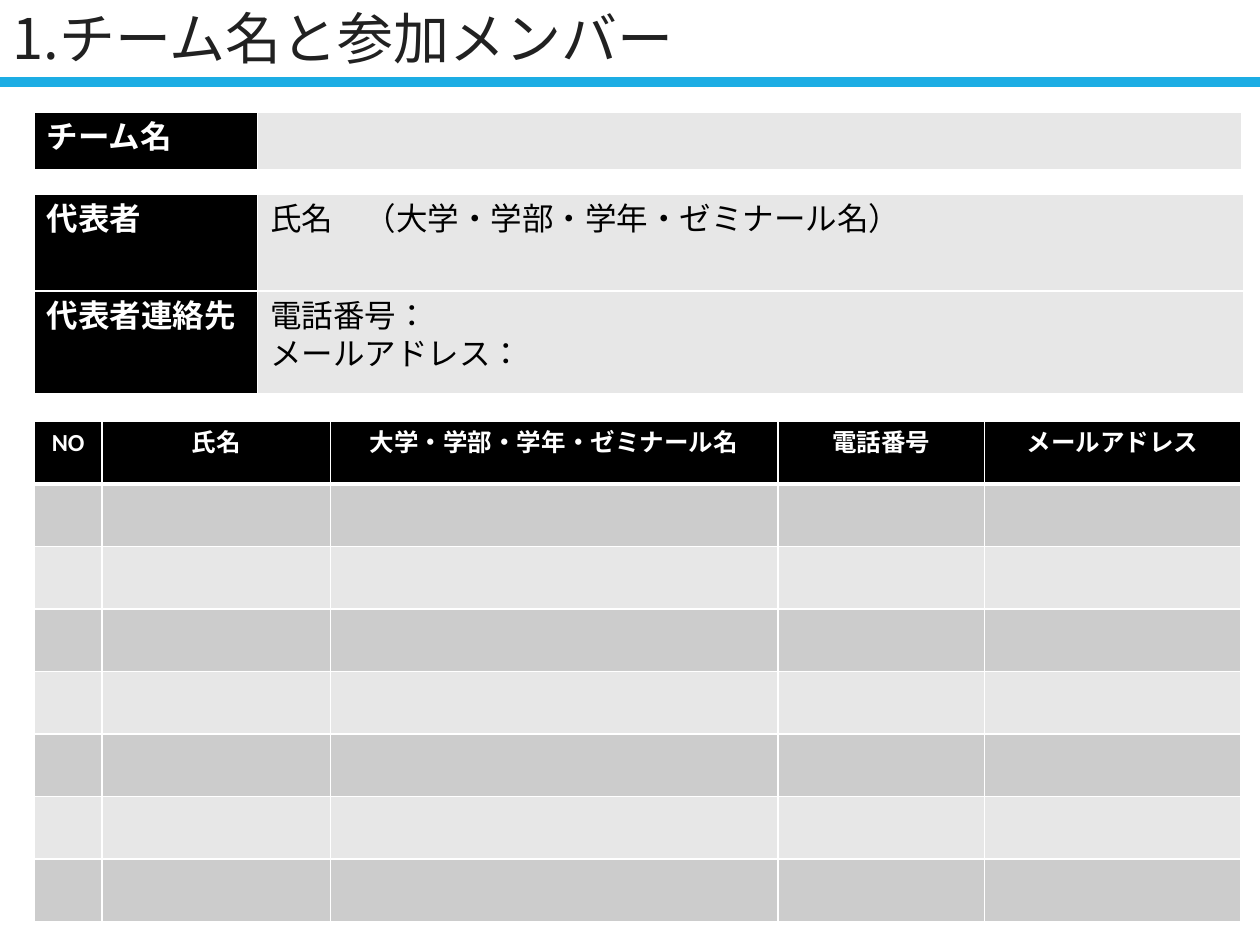
from dataclasses import dataclass

from lxml.etree import SubElement
from pptx import Presentation
from pptx.dml.color import RGBColor
from pptx.enum.shapes import MSO_CONNECTOR
from pptx.enum.text import MSO_ANCHOR, MSO_AUTO_SIZE, PP_ALIGN
from pptx.oxml.ns import qn
from pptx.util import Cm, Pt

BLACK = RGBColor(0x00, 0x00, 0x00)
WHITE = RGBColor(0xFF, 0xFF, 0xFF)
INK = RGBColor(0x21, 0x21, 0x21)
BLUE = RGBColor(0x1C, 0xAD, 0xE4)
PALE = RGBColor(0xE7, 0xE7, 0xE7)
GREY = RGBColor(0xCC, 0xCC, 0xCC)
FONT = "Calibri"
LEFT = 0.69


@dataclass
class Grid:
    top: float
    cols: list[float]
    rows: list[float]
    text: list[list[str]]
    size: int
    head: bool = False


def set_font(para, face: str, size: int, color: RGBColor, bold: bool) -> None:
    for run in para.runs:
        font = run.font
        font.name, font.size, font.bold = face, Pt(size), bold
        font.color.rgb = color
        props = font._element
        props.set("lang", "ja-JP")
        SubElement(props, qn("a:ea")).set("typeface", face)


def set_edge(cell, side: str, width: float) -> None:
    edge = SubElement(cell._tc.get_or_add_tcPr(), qn(f"a:{side}"), w=str(Pt(width)))
    fill = SubElement(edge, qn("a:solidFill"))
    SubElement(fill, qn("a:srgbClr"), val=str(WHITE))


def draw_cell(cell, text: str, grid: Grid, row: int, col: int) -> None:
    label = row == 0 if grid.head else col == 0
    for side in ("lnL", "lnR", "lnT", "lnB"):
        thick = grid.head and (row, side) in ((0, "lnB"), (1, "lnT"))
        set_edge(cell, side, 3 if thick else 1)
    cell.fill.solid()
    band = GREY if grid.head and row % 2 else PALE
    cell.fill.fore_color.rgb = BLACK if label else band
    cell.text_frame.text = text
    for para in cell.text_frame.paragraphs:
        para.alignment = PP_ALIGN.CENTER if grid.head else PP_ALIGN.LEFT
        set_font(para, FONT, grid.size, WHITE if label else BLACK, label)


def draw_grid(slide, grid: Grid) -> None:
    frame = slide.shapes.add_table(
        len(grid.rows), len(grid.cols), Cm(LEFT), Cm(grid.top),
        Cm(sum(grid.cols)), Cm(sum(grid.rows)),
    )
    table = frame.table
    table.first_row = grid.head
    table.horz_banding = grid.head
    for col, width in zip(table.columns, grid.cols):
        col.width = Cm(width)
    for row, height in zip(table.rows, grid.rows):
        row.height = Cm(height)
    for i, line in enumerate(grid.text):
        for j, text in enumerate(line):
            draw_cell(table.cell(i, j), text, grid, i, j)


def draw_title(slide, text: str) -> None:
    title = slide.shapes.title
    title.left, title.top, title.width, title.height = Cm(0), Cm(0), Cm(21.9), Cm(1.65)
    frame = title.text_frame
    frame.text = text
    frame.auto_size = MSO_AUTO_SIZE.NONE
    frame.vertical_anchor = MSO_ANCHOR.MIDDLE
    para = frame.paragraphs[0]
    para.alignment = PP_ALIGN.LEFT
    para.line_spacing = 0.9
    set_font(para, "Noto Sans CJK JP", 32, INK, False)


def draw_rule(slide, top: float) -> None:
    rule = slide.shapes.add_connector(
        MSO_CONNECTOR.STRAIGHT, Cm(0), Cm(top), Cm(25.4), Cm(top)
    )
    rule.line.color.rgb = BLUE
    rule.line.width = Pt(6)
    SubElement(rule._element.spPr, qn("a:effectLst"))


TEAM = Grid(2.27, [4.5, 19.84], [1.15], [["チーム名", ""]], 18)
LEAD = Grid(
    3.92, [4.5, 19.88], [1.95, 2.06],
    [
        ["代表者", "氏名　（大学・学部・学年・ゼミナール名）"],
        ["代表者連絡先", "電話番号：\nメールアドレス："],
    ],
    18,
)
HEADS = ["NO", "氏名", "大学・学部・学年・ゼミナール名", "電話番号", "メールアドレス"]
CREW = Grid(
    8.5, [1.37, 4.6, 9.02, 4.17, 5.16], [1.26] * 8,
    [HEADS] + [[""] * len(HEADS)] * 7, 14, True,
)


def main() -> None:
    deck = Presentation()
    deck.slide_width, deck.slide_height = Cm(25.4), Cm(19.05)
    slide = deck.slides.add_slide(deck.slide_layouts[5])
    draw_title(slide, "1.チーム名と参加メンバー")
    draw_rule(slide, 1.65)
    for grid in (TEAM, LEAD, CREW):
        draw_grid(slide, grid)
    deck.save("out.pptx")


if __name__ == "__main__":
    main()
